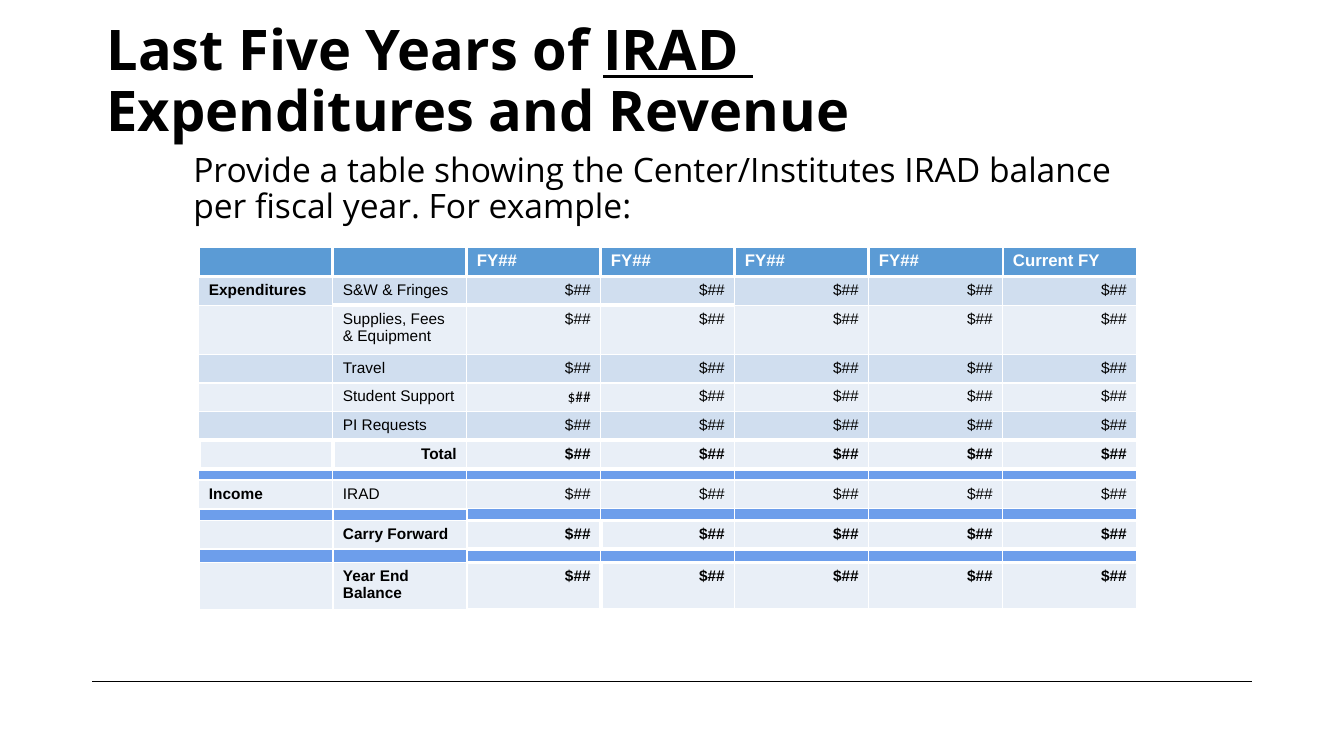
from dataclasses import dataclass, field
from typing import NamedTuple

from lxml.etree import SubElement
from pptx import Presentation
from pptx.dml.color import RGBColor
from pptx.enum.shapes import MSO_CONNECTOR
from pptx.enum.text import MSO_ANCHOR, PP_ALIGN
from pptx.oxml.ns import qn
from pptx.util import Pt

COLORS = {
    "ink": "000000",
    "white": "FFFFFF",
    "header": "5B9BD5",
    "dark": "D0DEEF",
    "light": "E9EFF7",
    "divider": "6D9EEB",
}
TITLE_FONT = "Open Sans"
TABLE_FONT = "Arial"
AMOUNT = "$##"
COLUMN_COUNT = 7
COLUMN_WIDTH = 95.75


class Edges(NamedTuple):
    """Border widths of a cell, in points."""
    left: float = 1
    right: float = 1
    top: float = 1
    bottom: float = 1


@dataclass
class Row:
    height: float
    fill: str
    texts: list[str]
    bold: bool = False
    edges: Edges = Edges()
    overrides: dict[int, Edges] = field(default_factory=dict)


def amounts(label: str, item: str) -> list[str]:
    return [label, item] + [AMOUNT] * (COLUMN_COUNT - 2)


THIN = Edges(1.5, 1.5, 1.5, 1.5)
THICK_TOP = Edges(top=3)
THICK_BOTTOM = Edges(bottom=3)
THICK = Edges(top=3, bottom=3)
BELOW_HEADER = Edges(top=2.25)
LOWER_LABELS = {0: THIN, 1: THIN}
BALANCE = LOWER_LABELS | {2: Edges(1.5, 3, 3, 3), 3: Edges(3, 1, 3, 3)}
EMPTY = [""] * COLUMN_COUNT

ROWS = [
    Row(20, "header", ["", ""] + ["FY##"] * 4 + ["Current FY"], True,
        Edges(2.25, 2.25, 2.25, 2.25)),
    Row(19, "dark", amounts("Expenditures", "S&W & Fringes"), edges=BELOW_HEADER,
        overrides={column: Edges(top=2.25, bottom=3) for column in (1, 2, 3)}),
    Row(35, "light", amounts("", "Supplies, Fees & Equipment"),
        overrides={column: THICK_TOP for column in (1, 2, 3)}),
    Row(20.5, "dark", amounts("", "Travel")),
    Row(20.5, "light", amounts("", "Student Support")),
    Row(19, "dark", amounts("", "PI Requests"), edges=THICK_BOTTOM),
    Row(19, "light", amounts("", "Total"), True, THICK,
        {0: Edges(3, 3, 3, 3), 1: Edges(3, 1, 3, 3)}),
    Row(8, "divider", EMPTY, edges=THICK_TOP),
    Row(19, "light", amounts("Income", "IRAD"),
        overrides={column: Edges(bottom=1.5) for column in (0, 1)}),
    Row(8.5, "divider", EMPTY, edges=THICK_BOTTOM, overrides=LOWER_LABELS),
    Row(19, "light", amounts("", "Carry Forward"), True, THICK, BALANCE),
    Row(9.5, "divider", EMPTY, edges=THICK, overrides=LOWER_LABELS),
    Row(32, "light", amounts("", "Year End Balance"), True, THICK, BALANCE),
]


def color(name: str) -> RGBColor:
    return RGBColor.from_string(COLORS[name])


def add_span(para, text: str, *, size: float, font: str, ink: str = "ink",
             bold: bool = False, underline: bool = False) -> None:
    span = para.add_run()
    span.text = text
    span.font.size = Pt(size)
    span.font.name = font
    span.font.bold = bold
    span.font.underline = underline
    span.font.color.rgb = color(ink)


def add_text_box(page, left: float, top: float, width: float, height: float,
                 anchor: MSO_ANCHOR):
    box = page.shapes.add_textbox(Pt(left), Pt(top), Pt(width), Pt(height))
    box.text_frame.word_wrap = True
    box.text_frame.vertical_anchor = anchor
    return box.text_frame


def set_borders(cell, edges: Edges) -> None:
    properties = cell._tc.get_or_add_tcPr()
    for position, (tag, width) in enumerate(zip(("lnL", "lnR", "lnT", "lnB"), edges)):
        line = SubElement(properties, qn(f"a:{tag}"), w=str(Pt(width)))
        fill = SubElement(line, qn("a:solidFill"))
        SubElement(fill, qn("a:srgbClr"), val=COLORS["white"])
        properties.insert(position, line)


def fill_cell(cell, row: Row, column: int) -> None:
    cell.fill.solid()
    cell.fill.fore_color.rgb = color(row.fill)
    set_borders(cell, row.overrides.get(column, row.edges))
    text = row.texts[column]
    para = cell.text_frame.paragraphs[0]
    if not text:
        # Small empty cells let the divider rows stay thin
        cell.margin_top = cell.margin_bottom = Pt(0)
        SubElement(para._p, qn("a:endParaRPr"), sz="400")
        return
    is_header = row.fill == "header"
    if text == AMOUNT or text == "Total":
        para.alignment = PP_ALIGN.RIGHT
    odd_font = column == 2 and row.texts[1] == "Student Support"
    add_span(para, text, size=12 if is_header else 11,
             font="Calibri" if odd_font else TABLE_FONT,
             ink="white" if is_header else "ink",
             bold=row.bold or column == 0)


def add_balance_table(page, left: float, top: float) -> None:
    frame = page.shapes.add_table(
        len(ROWS), COLUMN_COUNT, Pt(left), Pt(top),
        Pt(COLUMN_WIDTH * COLUMN_COUNT), Pt(sum(row.height for row in ROWS)))
    table = frame.table
    for table_column in table.columns:
        table_column.width = Pt(COLUMN_WIDTH)
    for index, row in enumerate(ROWS):
        table.rows[index].height = Pt(row.height)
        for column in range(COLUMN_COUNT):
            fill_cell(table.cell(index, column), row, column)


def main() -> None:
    deck = Presentation()
    deck.slide_width, deck.slide_height = Pt(960), Pt(540)
    page = deck.slides.add_slide(deck.slide_layouts[6])

    # Footer rule
    rule = page.shapes.add_connector(
        MSO_CONNECTOR.STRAIGHT, Pt(66), Pt(486.5), Pt(894), Pt(486.5))
    rule.line.color.rgb = color("ink")
    rule.line.width = Pt(0.75)
    SubElement(rule._element.spPr, qn("a:effectLst"))

    # Title
    title = add_text_box(page, 69, 48, 805, 58, MSO_ANCHOR.BOTTOM)
    first, second = title.paragraphs[0], title.add_paragraph()
    first.line_spacing = second.line_spacing = 0.9
    title_format = {"size": 40, "font": TITLE_FONT, "bold": True}
    add_span(first, "Last Five Years of ", **title_format)
    add_span(first, "IRAD ", underline=True, **title_format)
    add_span(second, "Expenditures and Revenue", **title_format)

    # Instruction
    instruction = add_text_box(page, 131, 106, 681, 276, MSO_ANCHOR.TOP)
    para = instruction.paragraphs[0]
    para.line_spacing = 0.9
    add_span(para, "Provide a table showing the Center/Institutes IRAD balance "
             "per fiscal year. For example:", size=24, font=TITLE_FONT)

    # Balance table
    add_balance_table(page, 142, 176)

    deck.save("out.pptx")


if __name__ == "__main__":
    main()
